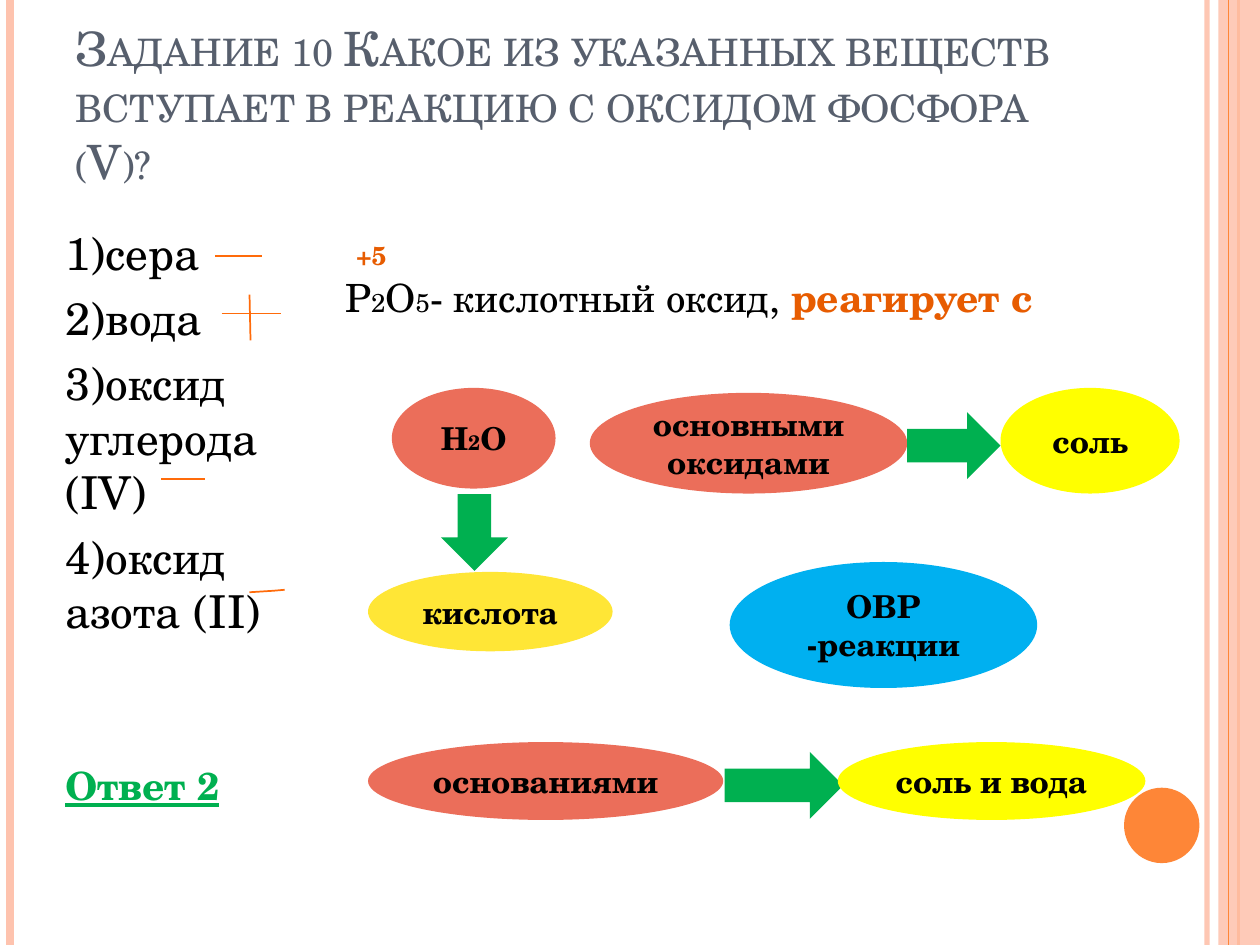
from typing import Any, NamedTuple

from lxml.etree import SubElement
from pptx import Presentation
from pptx.dml.color import RGBColor
from pptx.enum.shapes import MSO_CONNECTOR as Link, MSO_SHAPE as Kind
from pptx.enum.text import MSO_ANCHOR as Anchor, PP_ALIGN as Align
from pptx.oxml.ns import qn
from pptx.util import Cm, Pt

FONT = "TeX Gyre Schola"
BLACK = RGBColor(0x00, 0x00, 0x00)
SLATE = RGBColor(0x57, 0x5F, 0x6D)
PEACH = RGBColor(0xFE, 0xC3, 0xAE)
ORANGE = RGBColor(0xFE, 0x86, 0x37)
INK = RGBColor(0xFF, 0x6B, 0x0A)
RUST = RGBColor(0xE7, 0x5C, 0x01)
CORAL = RGBColor(0xEB, 0x6E, 0x5A)
GREEN = RGBColor(0x00, 0xB0, 0x50)
BLUE = RGBColor(0x00, 0xB0, 0xF0)
GOLD = RGBColor(0xFF, 0xE6, 0x36)
YELLOW = RGBColor(0xFF, 0xFF, 0x00)
WIDE, HIGH = 25.4, 19.05


class Run(NamedTuple):
    text: str
    size: float = 18
    color: RGBColor = BLACK
    style: dict[str, Any] = {}


class Para(NamedTuple):
    runs: list[Run]
    before: float = 0


class Item(NamedTuple):
    kind: Kind
    box: tuple[float, float, float, float]
    fill: RGBColor
    runs: list[Run] = []


class Rule(NamedTuple):
    x: float
    color: RGBColor
    width: float
    alpha: int = 100


def fade(fill: Any, alpha: int) -> None:
    """Make a solid fill partly transparent."""
    if alpha < 100:
        tone = fill._xPr.find(qn("a:solidFill"))[0]
        SubElement(tone, qn("a:alpha"), val=str(alpha * 1000))


def write(frame: Any, paras: list[Para], align: Align, anchor: Anchor) -> None:
    frame.word_wrap = True
    frame.vertical_anchor = anchor
    for i, para in enumerate(paras):
        line = frame.paragraphs[0] if i == 0 else frame.add_paragraph()
        line.alignment = align
        line.space_before = Pt(para.before)
        for part in para.runs:
            run = line.add_run()
            run.text = part.text
            look = {"name": FONT, "size": Pt(part.size), **part.style}
            for key, value in look.items():
                setattr(run.font, key, value)
            run.font.color.rgb = part.color


def add_text(slide: Any, box: tuple, paras: list[Para], anchor: Anchor = Anchor.TOP) -> Any:
    frame = slide.shapes.add_textbox(*map(Cm, box)).text_frame
    write(frame, paras, Align.LEFT, anchor)
    return frame


def add_item(slide: Any, item: Item, alpha: int = 100) -> None:
    shape = slide.shapes.add_shape(item.kind, *map(Cm, item.box))
    shape.shadow.inherit = False
    shape.fill.solid()
    shape.fill.fore_color.rgb = item.fill
    fade(shape.fill, alpha)
    shape.line.fill.background()
    if item.runs:
        write(shape.text_frame, [Para(item.runs)], Align.CENTER, Anchor.MIDDLE)


def add_line(slide: Any, dots: list[tuple], color: RGBColor, width: float, alpha: int = 100) -> None:
    """Two points give a connector, more give an open outline."""
    ends = [(Cm(x), Cm(y)) for x, y in dots]
    if len(ends) == 2:
        line = slide.shapes.add_connector(Link.STRAIGHT, *ends[0], *ends[1])
        SubElement(line._element.spPr, qn("a:effectLst"))
    else:
        path = slide.shapes.build_freeform(*ends[0])
        path.add_line_segments(ends[1:], close=False)
        line = path.convert_to_shape()
        line.shadow.inherit = False
        line.fill.background()
    line.line.color.rgb = color
    line.line.width = Pt(width)
    fade(line.line.fill, alpha)


BOLD = {"bold": True}
ANSWER = {"bold": True, "underline": True}
OVAL, RIGHT = Kind.OVAL, Kind.RIGHT_ARROW

# Side stripes: below and above the right-hand band
OUTER = [Rule(24.33, PEACH, 3, 93), Rule(0.2, PEACH, 4.5), Rule(24.97, ORANGE, 1.5)]
INNER = [Rule(24.77, ORANGE, 0.75)]
BAND = Item(Kind.RECTANGLE, (24.56, 0, 0.84, HIGH), PEACH)
DOT = Item(OVAL, (22.66, 15.88, 1.52, 1.52), ORANGE)

TITLE = "Задание 10 Какое из указанных веществ вступает в реакцию с оксидом фосфора (V)?"
CHOICES = ["1)сера", "2)вода", "3)оксид углерода (IV)", "4)оксид азота (II)"]
FORMULA = [
    Para([Run(" ", 22.2), Run("+5", 14.8, RUST, BOLD)]),
    Para([Run("P", 22.2), Run("2", 14.8), Run("O", 22.2), Run("5", 14.8),
          Run("- кислотный оксид, ", 22.2), Run("реагирует с", 22.2, RUST, BOLD)]),
]

# Plus and minus marks beside the choices
MARKS = [
    [(4.34, 5.16), (5.28, 5.16)],
    [(4.47, 6.32), (5.66, 6.32)],
    [(5.03, 5.94), (5.05, 6.86)],
    [(3.25, 9.65), (4.14, 9.65)],
    [(5.03, 11.94), (5.51, 11.91), (5.74, 11.89)],
]


def label(text: str) -> list[Run]:
    return [Run(text, style=BOLD)]


WATER = [Run("H", 18, style=BOLD), Run("2", 12, style=BOLD), Run("O", 18, style=BOLD)]
REAGENTS = [
    Item(OVAL, (7.9, 7.82, 3.3, 2.03), CORAL, WATER),
    Item(OVAL, (11.89, 7.92, 6.4, 2.03), CORAL, label("основными оксидами")),
    Item(OVAL, (7.42, 14.96, 7.16, 1.57), CORAL, label("основаниями")),
    Item(OVAL, (14.71, 11.33, 6.2, 2.54), BLUE, label("ОВР -реакции")),
]
RESULTS = [
    Item(Kind.DOWN_ARROW, (8.89, 9.96, 1.35, 1.55), GREEN),
    Item(OVAL, (7.42, 11.53, 4.93, 1.6), GOLD, label("кислота")),
    Item(RIGHT, (14.61, 15.16, 2.39, 1.35), GREEN),
    Item(OVAL, (16.89, 14.96, 6.2, 1.57), YELLOW, label("соль и вода")),
    Item(RIGHT, (18.29, 8.31, 1.88, 1.35), GREEN),
    Item(OVAL, (20.17, 7.82, 3.61, 2.13), YELLOW, label("соль")),
]


def add_rules(slide: Any, rules: list[Rule]) -> None:
    for x, *look in rules:
        add_line(slide, [(x, 0), (x, HIGH)], *look)


def main() -> None:
    deck = Presentation()
    deck.slide_width, deck.slide_height = Cm(WIDE), Cm(HIGH)
    slide = deck.slides.add_slide(deck.slide_layouts[6])

    # Backdrop
    add_rules(slide, OUTER)
    add_item(slide, BAND, 87)
    add_rules(slide, INNER)
    add_item(slide, DOT)

    # Title in small capitals
    head = add_text(slide, (1.27, 0.76, 20.75, 3.18), [Para([Run(TITLE, 27, SLATE)])], Anchor.BOTTOM)
    head.paragraphs[0].runs[0]._r.get_or_add_rPr().set("cap", "small")

    # Choices with the answer, then the formula
    lines = [Para([Run(text, 25.9)], 6) for text in CHOICES]
    lines.append(Para([Run("Ответ 2", 22.2, GREEN, ANSWER)], 71))
    add_text(slide, (1.07, 4.42, 5.41, 12.7), lines)
    add_text(slide, (6.71, 4.45, 16.99, 1.96), FORMULA)

    # Reaction scheme and marks
    for item in REAGENTS:
        add_item(slide, item)
    for dots in MARKS:
        add_line(slide, dots, INK, 1)
    for item in RESULTS:
        add_item(slide, item)

    deck.save("out.pptx")


if __name__ == "__main__":
    main()
